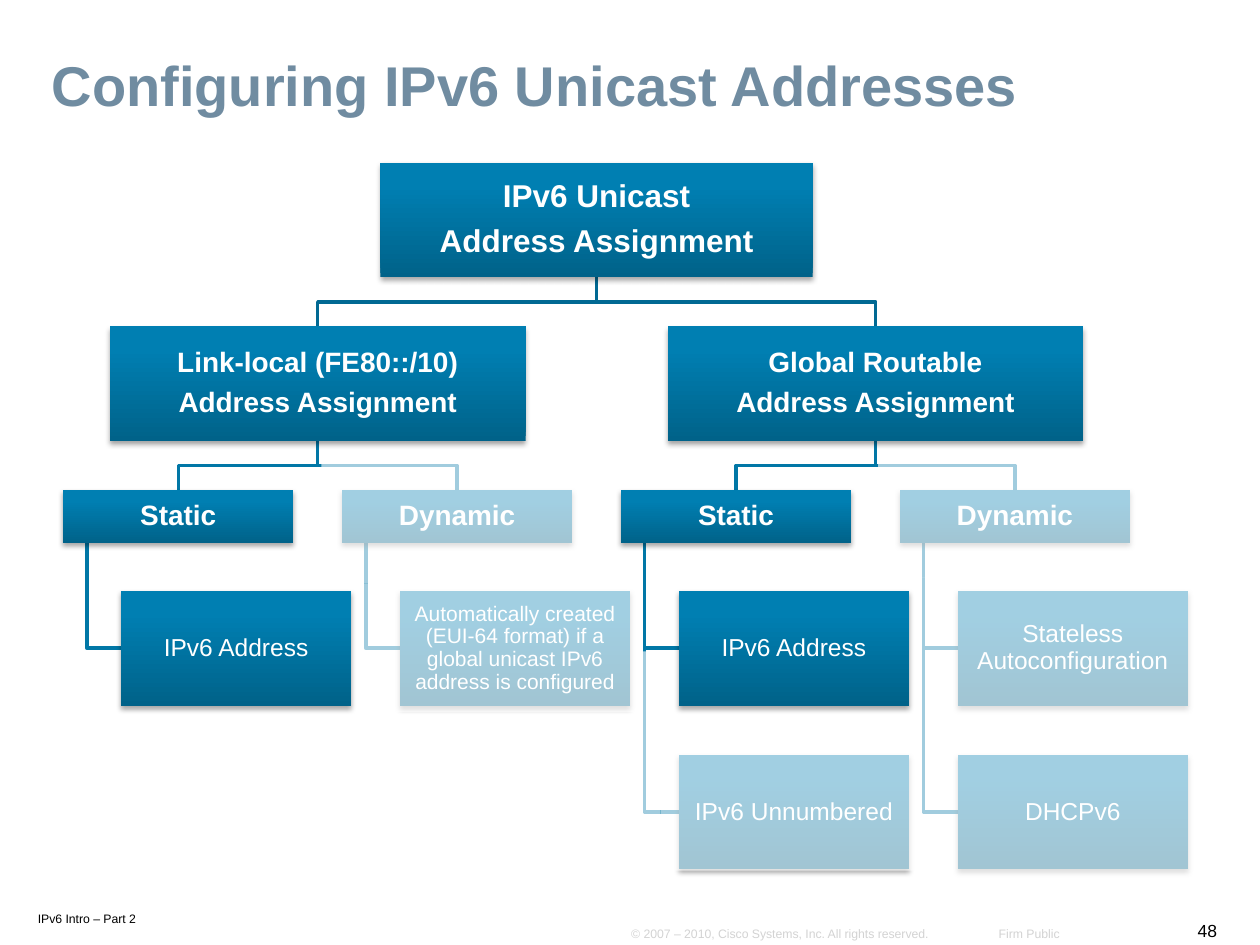
import pptx
import pptx.util
import pptx.dml.color
import pptx.enum.shapes
import pptx.enum.text
import pptx.oxml
import pptx.oxml.ns

Inches, Pt = pptx.util.Inches, pptx.util.Pt
RGBColor = pptx.dml.color.RGBColor
ALIGN, ANCHOR = pptx.enum.text.PP_ALIGN, pptx.enum.text.MSO_ANCHOR
RECTANGLE = pptx.enum.shapes.MSO_SHAPE.RECTANGLE

# Content
TITLE = "Configuring IPv6 Unicast Addresses"
ROOT = "IPv6 Unicast\nAddress Assignment"
SCOPES = ["Link-local (FE80::/10)\nAddress Assignment",
          "Global Routable\nAddress Assignment"]
# Two methods under each scope: method, text size of its options, options
METHODS = [
    ("Static", 14, ["IPv6 Address"]),
    ("Dynamic", 12, ["Automatically created (EUI-64 format) if a global "
                     "unicast IPv6 address is configured"]),
    ("Static", 14, ["IPv6 Address", "IPv6 Unnumbered"]),
    ("Dynamic", 14, ["Stateless Autoconfiguration", "DHCPv6"]),
]
BLACK = RGBColor(0x00, 0x00, 0x00)
WHITE = RGBColor(0xFF, 0xFF, 0xFF)
PALE_GREY = RGBColor(0xD3, 0xD3, 0xD3)
TITLE_BLUE = RGBColor(0x70, 0x8C, 0xA1)
ROOT_LINE = RGBColor(0x01, 0x69, 0x93)
METHOD_LINE = RGBColor(0x01, 0x77, 0xA6)
BOX_GRADIENT = [(0, RGBColor(0x00, 0x62, 0x89)),
                (80, RGBColor(0x00, 0x7F, 0xB2)),
                (100, RGBColor(0x00, 0x80, 0xB3))]

# text, (left, top, width, height), size, colour, alignment, wrap
FOOTERS = [
    ("IPv6 Intro – Part 2", (0.21, 7.18, 1.05, 0.21), 7, BLACK, ALIGN.LEFT, True),
    ("48", (9.4, 7.25, 0.35, 0.26), 10, BLACK, ALIGN.RIGHT, False),
    ("© 2007 – 2010, Cisco Systems, Inc. All rights reserved.",
     (4.92, 7.3, 2.57, 0.21), 7, PALE_GREY, ALIGN.LEFT, False),
    ("Firm Public", (7.79, 7.3, 0.71, 0.21), 7, PALE_GREY, ALIGN.RIGHT, False),
]
# Translucent white panels that fade the parts not covered yet
VEILS = [(2.55, 3.61, 2.1, 1.02), (2.84, 4.63, 2.21, 1.02),
         (6.97, 3.56, 2.1, 1.02), (7.26, 4.58, 2.21, 2.44),
         (5.24, 5.89, 2.05, 1.02), (5.08, 5.17, 0.16, 1.7)]
VEIL_OPACITY = 63

# Tree measures
BOX_HEIGHT, METHOD_HEIGHT, ROW_PITCH = 0.91, 0.42, 1.3
ROOT_TOP, SCOPE_TOP, METHOD_TOP, OPTION_TOP = 1.29, 2.59, 3.89, 4.69
ROOT_WIDTH, SCOPE_WIDTH, METHOD_WIDTH = 3.43, 3.3, 1.83
METHOD_LEFT, METHOD_RIGHTMOST = 0.5, 7.14
METHOD_PITCH = (METHOD_RIGHTMOST - METHOD_LEFT) / (len(METHODS) - 1)
OPTION_INDENT, STEM_INDENT = 0.46, 0.19


def drawing_xml(tag, attributes="", inner=""):
    return pptx.oxml.parse_xml(
        f'<a:{tag} {pptx.oxml.ns.nsdecls("a")} {attributes}>{inner}</a:{tag}>')


def format_text(frame, text, size, color, align, bold=False):
    frame.text = text
    for paragraph in frame.paragraphs:
        paragraph.alignment = align
        font = paragraph.runs[0].font
        font.name, font.size, font.bold = "Arial", Pt(size), bold
        font.color.rgb = color


def add_elbow(slide, points, color):
    (start_x, start_y), *rest = [(Inches(x), Inches(y)) for x, y in points]
    builder = slide.shapes.build_freeform(start_x, start_y)
    builder.add_line_segments(rest, close=False)
    elbow = builder.convert_to_shape()
    elbow.fill.background()
    elbow.line.color.rgb = color
    elbow.line.width = Pt(2)
    elbow.shadow.inherit = False


def add_box(slide, text, left, top, width, height, size, bold):
    box = slide.shapes.add_shape(
        RECTANGLE, *map(Inches, (left, top, width, height)))
    box.line.fill.background()
    box.shadow.inherit = False
    properties = box.element.spPr
    stops = "".join(f'<a:gs pos="{at * 1000}"><a:srgbClr val="{color}"/></a:gs>'
                    for at, color in BOX_GRADIENT)
    properties.find(pptx.oxml.ns.qn("a:prstGeom")).addnext(drawing_xml(
        "gradFill", 'rotWithShape="1"',
        f'<a:gsLst>{stops}</a:gsLst><a:lin ang="16200000" scaled="0"/>'))
    properties.find(pptx.oxml.ns.qn("a:effectLst")).append(drawing_xml(
        "outerShdw",
        f'blurRad="{Pt(3.1)}" dist="{Pt(1.8)}" dir="5400000" rotWithShape="0"',
        '<a:srgbClr val="000000"><a:alpha val="35000"/></a:srgbClr>'))
    frame = box.text_frame
    frame.word_wrap = True
    frame.vertical_anchor = ANCHOR.MIDDLE
    frame.margin_left = frame.margin_right = Inches(0.01)
    frame.margin_top = frame.margin_bottom = Inches(0.01)
    format_text(frame, text, size, WHITE, ALIGN.CENTER, bold)
    for paragraph in frame.paragraphs:
        paragraph.line_spacing = 0.9
        paragraph.space_after = Pt(round(0.35 * size, 1))


def add_branch(slide, parent_x, parent_bottom, child_x, child_top, color):
    middle = (parent_bottom + child_top) / 2
    add_elbow(slide, [(parent_x, parent_bottom), (parent_x, middle),
                      (child_x, middle), (child_x, child_top)], color)


def add_tree(slide):
    method_lefts = [METHOD_LEFT + i * METHOD_PITCH for i in range(len(METHODS))]
    method_centers = [left + METHOD_WIDTH / 2 for left in method_lefts]
    scope_centers = [sum(method_centers[i:i + 2]) / 2 for i in (0, 2)]
    root_center = sum(scope_centers) / 2
    boxes = [(ROOT, root_center - ROOT_WIDTH / 2, ROOT_TOP,
              ROOT_WIDTH, BOX_HEIGHT, 18, True)]
    for scope, center in zip(SCOPES, scope_centers):
        boxes.append((scope, center - SCOPE_WIDTH / 2, SCOPE_TOP,
                      SCOPE_WIDTH, BOX_HEIGHT, 16, True))

    # Lines, from right to left so the left branches lie on top
    for i in reversed(range(len(METHODS))):
        method, option_size, options = METHODS[i]
        left = method_lefts[i]
        boxes.append((method, left, METHOD_TOP,
                      METHOD_WIDTH, METHOD_HEIGHT, 16, True))
        for row, option in enumerate(options):
            top = OPTION_TOP + row * ROW_PITCH
            boxes.append((option, left + OPTION_INDENT, top,
                          METHOD_WIDTH, BOX_HEIGHT, option_size, False))
            stem, middle = left + STEM_INDENT, top + BOX_HEIGHT / 2
            add_elbow(slide, [(stem, METHOD_TOP + METHOD_HEIGHT), (stem, middle),
                              (left + OPTION_INDENT, middle)], METHOD_LINE)
        add_branch(slide, scope_centers[i // 2], SCOPE_TOP + BOX_HEIGHT,
                   method_centers[i], METHOD_TOP, METHOD_LINE)
    for center in scope_centers:
        add_branch(slide, root_center, ROOT_TOP + BOX_HEIGHT,
                   center, SCOPE_TOP, ROOT_LINE)

    # Boxes over the lines
    for box in boxes:
        add_box(slide, *box)


def main():
    deck = pptx.Presentation()
    deck.slide_width, deck.slide_height = Inches(10), Inches(7.5)
    slide = deck.slides.add_slide(deck.slide_layouts[5])

    # Title
    title = slide.shapes.title
    title.left, title.top, title.width, title.height = map(
        Inches, (0.31, 0.4, 9.32, 0.6))
    format_text(title.text_frame, TITLE, 32, TITLE_BLUE, ALIGN.LEFT, True)
    title.text_frame.vertical_anchor = ANCHOR.MIDDLE
    title.text_frame.paragraphs[0].line_spacing = 0.9

    # Footer
    for text, place, size, color, align, wrap in FOOTERS:
        footer = slide.shapes.add_textbox(*map(Inches, place)).text_frame
        footer.word_wrap = wrap
        footer.auto_size = pptx.enum.text.MSO_AUTO_SIZE.SHAPE_TO_FIT_TEXT
        footer.vertical_anchor = ANCHOR.BOTTOM
        footer.margin_left = footer.margin_right = Inches(0.09)
        footer.margin_top = footer.margin_bottom = Inches(0.04)
        format_text(footer, text, size, color, align)

    add_tree(slide)

    # Veils
    for place in VEILS:
        veil = slide.shapes.add_shape(RECTANGLE, *map(Inches, place))
        veil.fill.solid()
        veil.fill.fore_color.rgb = WHITE
        veil.line.fill.background()
        veil.shadow.inherit = False
        white = veil.element.spPr.find(".//" + pptx.oxml.ns.qn("a:srgbClr"))
        white.append(drawing_xml("alpha", f'val="{VEIL_OPACITY * 1000}"'))

    deck.save("out.pptx")


if __name__ == "__main__":
    main()
